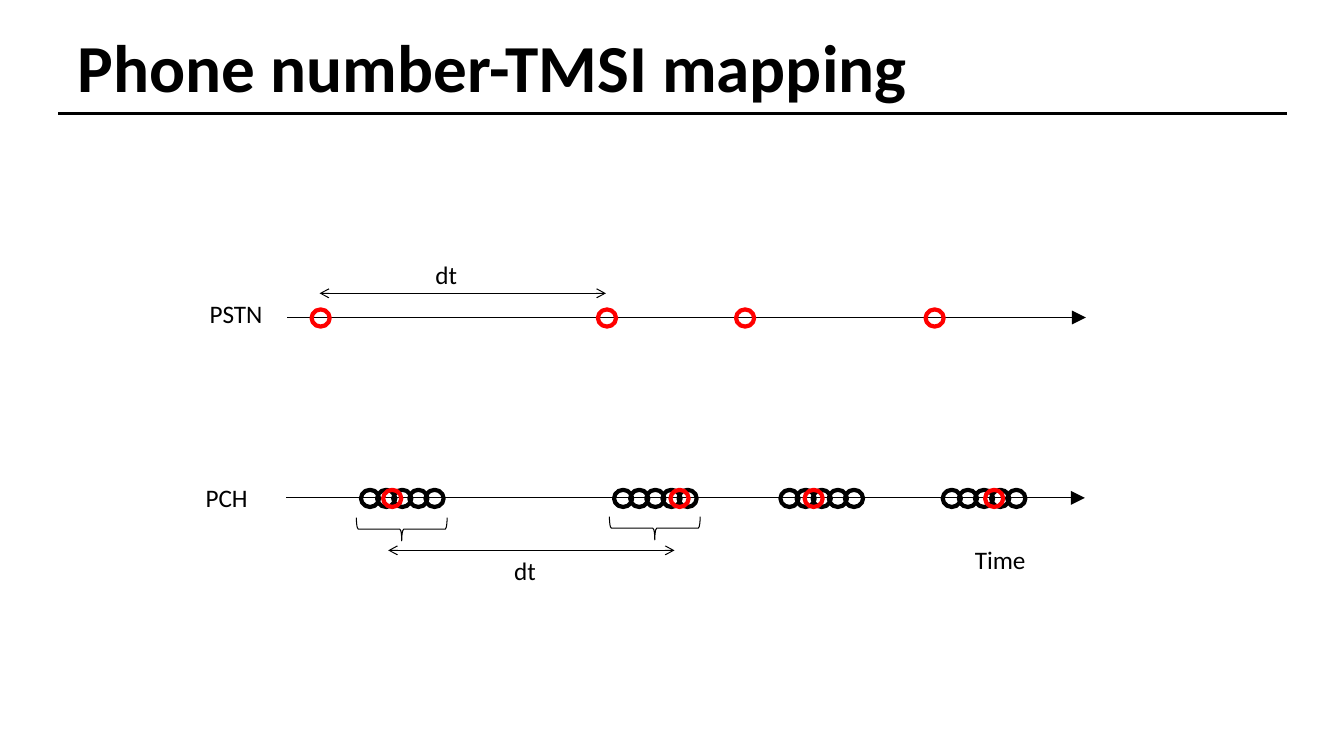
from dataclasses import dataclass

from lxml import etree
from pptx import Presentation
from pptx.dml.color import RGBColor
from pptx.enum import shapes, text
from pptx.oxml import ns
from pptx.shapes.autoshape import Shape
from pptx.slide import Slide
from pptx.util import Inches, Pt

BLACK = RGBColor(0x00, 0x00, 0x00)
RED = RGBColor(0xFF, 0x00, 0x00)
FONT = "Calibri"
DOT_WIDTH, DOT_HEIGHT = 0.18, 0.17
DOT_STEP = 0.16
DOTS_PER_BURST = 5
BRACE_WIDTH, BRACE_LENGTH = 0.23, 0.9


@dataclass(frozen=True)
class Timeline:
    left: float
    right: float
    y: float
    dot_top: float
    burst_lefts: tuple[float, ...]
    call_lefts: tuple[float, ...]


@dataclass(frozen=True)
class Interval:
    left: float
    right: float
    y: float


@dataclass(frozen=True)
class Label:
    words: str
    left: float
    top: float
    width: float


@dataclass(frozen=True)
class Brace:
    left: float
    top: float


TIMELINES = (
    Timeline(2.85, 10.77, 3.15, 3.07, (), (3.09, 5.93, 7.3, 9.18)),
    Timeline(2.84, 10.76, 4.94, 4.86, (3.58, 6.09, 7.74, 9.35), (3.8, 6.65, 7.98, 9.77)),
)
INTERVALS = (Interval(3.17, 6.01, 2.91), Interval(3.85, 6.69, 5.46))
LABELS = (
    Label("PSTN", 1.98, 2.91, 0.73),
    Label("PCH", 1.94, 4.74, 0.62),
    Label("Time", 9.57, 5.35, 0.71),
    Label("dt", 4.22, 2.52, 0.42),
    Label("dt", 5, 5.46, 0.42),
)
BRACES = (Brace(6.38, 4.79), Brace(3.87, 4.8))


def add_run(paragraph, words: str, size: float, bold: bool = False) -> None:
    run = paragraph.add_run()
    run.text = words
    run.font.name = FONT
    run.font.size = Pt(size)
    run.font.bold = bold
    run.font.color.rgb = BLACK


def add_line(slide: Slide, left: float, right: float, y: float, weight: float = 0.75,
             head: str = "", tail: str = "", size: str = "med") -> None:
    """Draw a level line with optional arrowheads at its left and right ends."""
    line = slide.shapes.add_connector(
        shapes.MSO_CONNECTOR.STRAIGHT, Inches(left), Inches(y), Inches(right), Inches(y))
    line.line.color.rgb = BLACK
    line.line.width = Pt(weight)
    outline = line.line._get_or_add_ln()
    for tag, kind in (("a:headEnd", head), ("a:tailEnd", tail)):
        if kind:
            etree.SubElement(outline, ns.qn(tag), type=kind, w=size, len=size)
    etree.SubElement(line._element.spPr, ns.qn("a:effectLst"))


def add_outline(slide: Slide, kind: shapes.MSO_SHAPE, left: float, top: float,
                width: float, height: float, color: RGBColor, weight: float) -> Shape:
    """Draw an unfilled preset shape."""
    shape = slide.shapes.add_shape(
        kind, Inches(left), Inches(top), Inches(width), Inches(height))
    shape.shadow.inherit = False
    shape.fill.background()
    shape.line.color.rgb = color
    shape.line.width = Pt(weight)
    return shape


def add_dot(slide: Slide, left: float, top: float, color: RGBColor) -> None:
    add_outline(slide, shapes.MSO_SHAPE.OVAL, left, top, DOT_WIDTH, DOT_HEIGHT, color, 3)


def add_timeline(slide: Slide, timeline: Timeline) -> None:
    for burst_left in timeline.burst_lefts:
        for index in range(DOTS_PER_BURST):
            add_dot(slide, burst_left + index * DOT_STEP, timeline.dot_top, BLACK)
    add_line(slide, timeline.left, timeline.right, timeline.y, tail="triangle", size="lg")
    for call_left in timeline.call_lefts:
        add_dot(slide, call_left, timeline.dot_top, RED)


def add_label(slide: Slide, label: Label) -> None:
    box = slide.shapes.add_textbox(
        Inches(label.left), Inches(label.top), Inches(label.width), Inches(0.4))
    frame = box.text_frame
    frame.word_wrap = False
    frame.auto_size = text.MSO_AUTO_SIZE.SHAPE_TO_FIT_TEXT
    add_run(frame.paragraphs[0], label.words, 18)


def add_title(slide: Slide, words: str) -> None:
    title = slide.shapes.title
    title.left, title.top = Inches(0.67), Inches(0.18)
    title.width, title.height = Inches(12), Inches(0.94)
    title.text_frame.vertical_anchor = text.MSO_ANCHOR.MIDDLE
    paragraph = title.text_frame.paragraphs[0]
    paragraph.alignment = text.PP_ALIGN.LEFT
    add_run(paragraph, words, 48, bold=True)


def main() -> None:
    presentation = Presentation()
    presentation.slide_width = Inches(13.33)
    presentation.slide_height = Inches(7.5)
    slide = presentation.slides.add_slide(presentation.slide_layouts[5])
    add_title(slide, "Phone number-TMSI mapping")
    add_line(slide, 0.58, 12.76, 1.13, weight=2)
    for timeline in TIMELINES:
        add_timeline(slide, timeline)
    for interval in INTERVALS:
        add_line(slide, interval.left, interval.right, interval.y, head="arrow", tail="arrow")
    for label in LABELS:
        add_label(slide, label)
    for brace in BRACES:
        shape = add_outline(slide, shapes.MSO_SHAPE.LEFT_BRACE, brace.left, brace.top,
                            BRACE_WIDTH, BRACE_LENGTH, BLACK, 0.75)
        shape.rotation = 270
    presentation.save("out.pptx")


if __name__ == "__main__":
    main()
